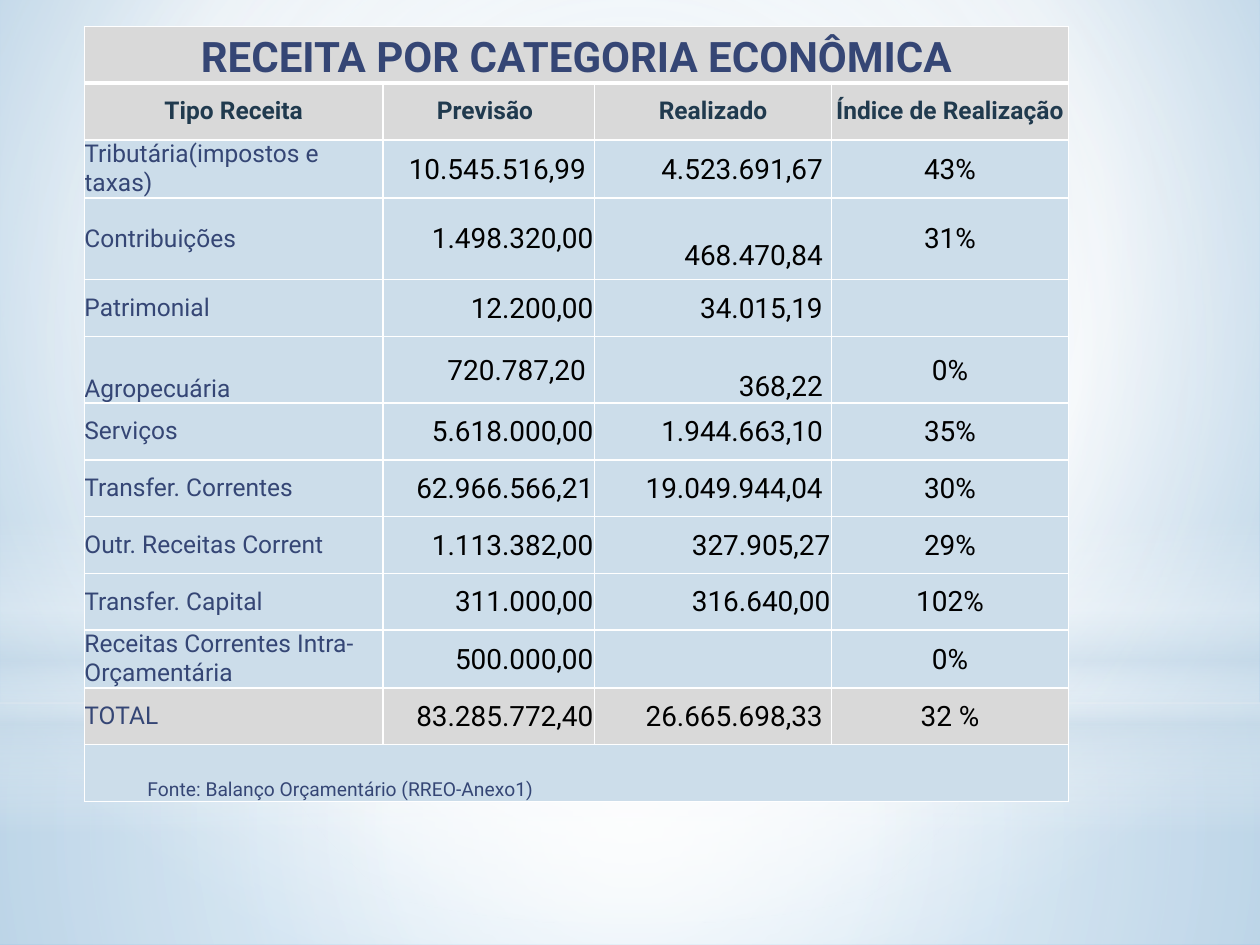
from lxml import etree
from pptx import Presentation
from pptx.dml.color import RGBColor
from pptx.enum import shapes, text
from pptx.oxml import ns
from pptx.util import Inches, Pt

COLORS = {"white": "FFFFFF", "gray": "D9D9D9", "pale": "CCDDEA", "navy": "354675",
          "slate": "203A4E", "black": "000000", "sky": "BCD5E8", "blue": "82B6DE"}
FONT = "Roboto"
TITLE = "RECEITA POR CATEGORIA ECONÔMICA"
HEADERS = ["Tipo Receita", "Previsão", "Realizado", "Índice de Realização"]
REVENUES = [
    ("Tributária(impostos e taxas)", "10.545.516,99", "4.523.691,67", "43%"),
    ("Contribuições", "1.498.320,00", "468.470,84", "31%"),
    ("Patrimonial", "12.200,00", "34.015,19", ""),
    ("Agropecuária", "720.787,20", "368,22", "0%"),
    ("Serviços", "5.618.000,00", "1.944.663,10", "35%"),
    ("Transfer. Correntes", "62.966.566,21", "19.049.944,04", "30%"),
    ("Outr. Receitas Corrent", "1.113.382,00", "327.905,27", "29%"),
    ("Transfer. Capital", "311.000,00", "316.640,00", "102%"),
    ("Receitas Correntes Intra-Orçamentária", "500.000,00", "", "0%"),
    ("TOTAL", "83.285.772,40", "26.665.698,33", "32 %"),
]
SOURCE = "Fonte: Balanço Orçamentário (RREO-Anexo1)"
PADDED = {"10.545.516,99", "720.787,20"}
FLUSH = {"327.905,27", "316.640,00"}
LOWERED = {"468.470,84", "368,22"}
COLUMN_WIDTHS = [2.37, 1.68, 1.88, 1.88]
ROW_HEIGHT = 0.45
TALL_ROWS = {"Contribuições": 0.65, "Agropecuária": 0.53}

CENTER = (50, 50, 50, 50)
BACKDROP = [(0, "sky", 100), (60, "white", 100), (100, "blue", 100)]
GLOWS = [
    ("RECTANGLE", 5.58, 1.92, [(0, "white", 91), (37, "white", 76), (100, "pale", 79)], CENTER),
    ("RECTANGLE", 0, 5.58, [(0, "white", 89), (48, "white", 62), (100, "pale", 79)], CENTER),
    ("RECTANGLE", 4.12, 2.5, [(0, "white", 0), (29, "white", 30), (45, "pale", 40),
                              (55, "white", 26), (65, "pale", 60), (100, "white", 0)], None),
    ("OVAL", 1.75, 5.58, [(0, "white", 100), (56, "white", 0)], CENTER),
]


def rgb(name):
    return RGBColor.from_string(COLORS[name])


def add(parent, tag, **attributes):
    values = {key: str(value) for key, value in attributes.items()}
    return etree.SubElement(parent, ns.qn(tag), values)


def set_gradient(host, stops, focus):
    gradient = etree.Element(ns.qn("a:gradFill"), rotWithShape="1")
    stop_list = add(gradient, "a:gsLst")
    for position, color, opacity in stops:
        stop = add(stop_list, "a:gs", pos=position * 1000)
        swatch = add(stop, "a:srgbClr", val=COLORS[color])
        if opacity < 100:
            add(swatch, "a:alpha", val=opacity * 1000)
    if focus:
        circle = add(gradient, "a:path", path="circle")
        add(circle, "a:fillToRect", **{side: inset * 1000 for side, inset in zip("ltrb", focus)})
    else:
        add(gradient, "a:lin", ang=90 * 60000, scaled=0)
    host.replace(host.find(ns.qn("a:solidFill")), gradient)


def add_backdrop(page):
    page.background.fill.solid()
    page.background.fill.fore_color.rgb = rgb("white")
    set_gradient(page.element.find(".//" + ns.qn("p:bgPr")), BACKDROP, (20, 10, 20, 60))
    for kind, top, height, stops, focus in GLOWS:
        glow = page.shapes.add_shape(getattr(shapes.MSO_SHAPE, kind), 0, Inches(top),
                                     Inches(10), Inches(height))
        glow.shadow.inherit = False
        glow.fill.solid()
        glow.fill.fore_color.rgb = rgb("white")
        glow.line.fill.background()
        set_gradient(glow.element.spPr, stops, focus)


def set_borders(cell, top=1, bottom=1):
    properties = cell._tc.get_or_add_tcPr()
    for index, (side, width) in enumerate(zip("LRTB", (1, 1, top, bottom))):
        line = etree.Element(ns.qn("a:ln" + side), w=str(Pt(width)))
        add(add(line, "a:solidFill"), "a:srgbClr", val=COLORS["white"])
        properties.insert(index, line)


def write(cell, content, size=14, color="navy", bold=False, align="LEFT", anchor="MIDDLE",
          left=0, top=0, right=0):
    cell.vertical_anchor = getattr(text.MSO_ANCHOR, anchor)
    cell.margin_left, cell.margin_top = Inches(left), Inches(top)
    cell.margin_right, cell.margin_bottom = Inches(right), 0
    para = cell.text_frame.paragraphs[0]
    para.alignment = getattr(text.PP_ALIGN, align)
    para.font.size = Pt(size)
    if content:
        span = para.add_run()
        span.text = content
        span.font.name, span.font.size, span.font.bold = FONT, Pt(size), bold
        span.font.color.rgb = rgb(color)


def amount_inset(value, column):
    padded = value in PADDED or (column == 2 and value not in FLUSH)
    return 0.07 if padded else 0.01


def add_revenue_table(page):
    heights = [ROW_HEIGHT] * 2 + [TALL_ROWS.get(row[0], ROW_HEIGHT) for row in REVENUES]
    heights.append(ROW_HEIGHT)
    frame = page.shapes.add_table(len(heights), len(COLUMN_WIDTHS), Inches(0.67), Inches(0.21),
                                  Inches(sum(COLUMN_WIDTHS)), Inches(sum(heights)))
    table = frame.table
    table.first_row = table.horz_banding = False
    for column, width in zip(table.columns, COLUMN_WIDTHS):
        column.width = Inches(width)
    last = len(heights) - 1
    gray_rows = {0, 1, last - 1}
    for index, height in enumerate(heights):
        table.rows[index].height = Inches(height)
        for cell in table.rows[index].cells:
            cell.fill.solid()
            cell.fill.fore_color.rgb = rgb("gray" if index in gray_rows else "pale")
            set_borders(cell, top=3 if index == 1 else 1, bottom=3 if index == 0 else 1)
    for index in (0, last):
        table.cell(index, 0).merge(table.cell(index, len(COLUMN_WIDTHS) - 1))

    write(table.cell(0, 0), TITLE, size=24, bold=True, align="CENTER", anchor="BOTTOM")
    for column, header in enumerate(HEADERS):
        write(table.cell(1, column), header, color="slate", bold=True, align="CENTER",
              right=0.06 if column == 1 else 0)
    for index, (label, *values) in enumerate(REVENUES, start=2):
        write(table.cell(index, 0), label,
              anchor="BOTTOM" if label == "Agropecuária" else "MIDDLE")
        for column, value in enumerate(values, start=1):
            share = column == 3
            write(table.cell(index, column), value, size=16, color="black",
                  align="CENTER" if share else "RIGHT", left=0.01,
                  top=0.27 if value in LOWERED else 0.01,
                  right=0.01 if share else amount_inset(value, column))
    write(table.cell(last, 0), SOURCE, size=11, anchor="BOTTOM", left=0.5)


def main():
    deck = Presentation()
    deck.slide_width, deck.slide_height = Inches(10), Inches(7.5)
    page = deck.slides.add_slide(deck.slide_layouts[6])
    add_backdrop(page)
    add_revenue_table(page)
    deck.save("out.pptx")


if __name__ == "__main__":
    main()
